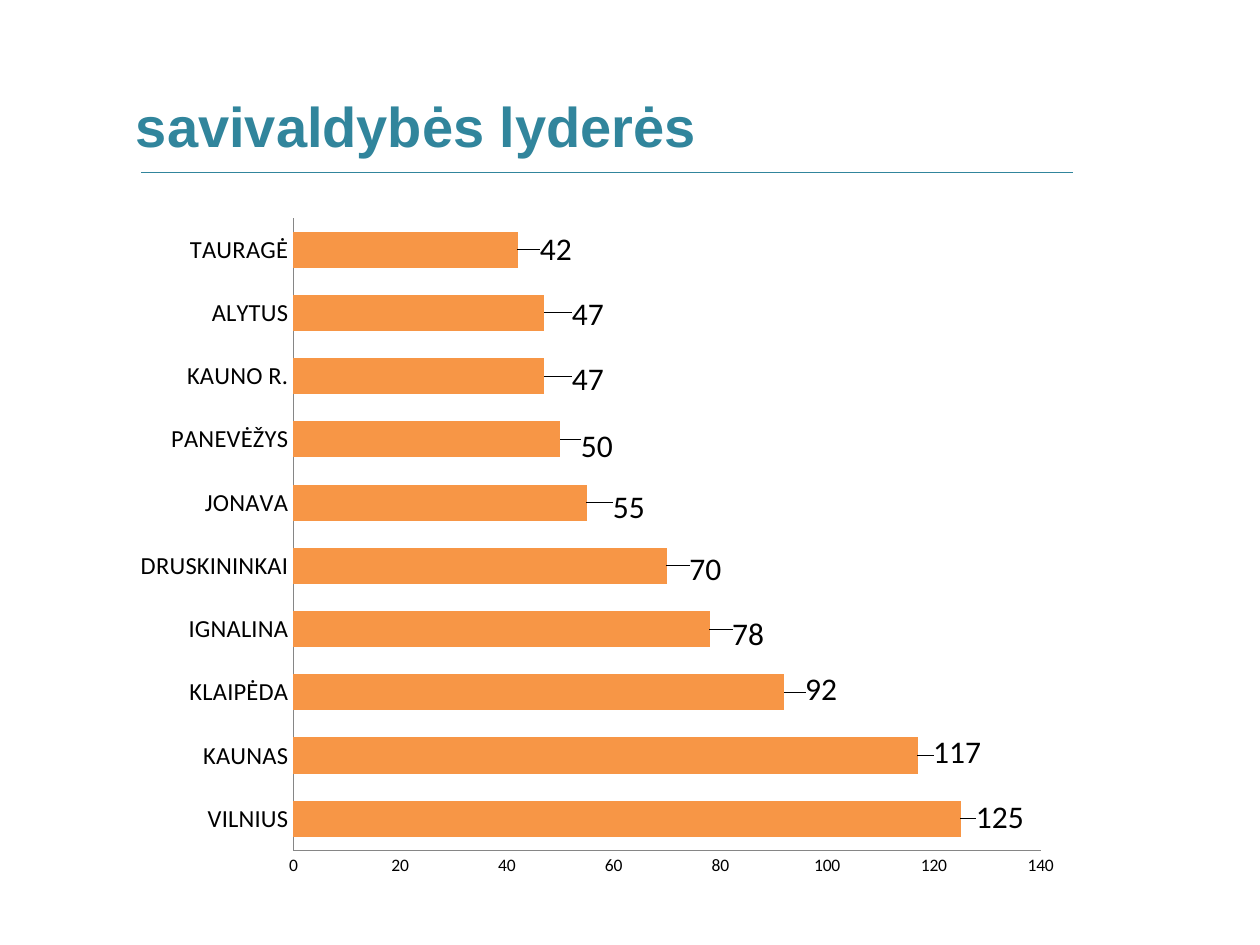
from dataclasses import dataclass

from lxml.etree import SubElement
from pptx import Presentation
from pptx.chart.data import CategoryChartData
from pptx.dml.color import RGBColor
from pptx.enum.chart import XL_CHART_TYPE, XL_LABEL_POSITION, XL_TICK_MARK
from pptx.enum.shapes import MSO_CONNECTOR
from pptx.oxml import parse_xml
from pptx.oxml.ns import nsdecls, qn
from pptx.util import Pt


@dataclass(frozen=True)
class Theme:
    """Colours, fonts and type sizes of the slide."""
    accent: RGBColor = RGBColor(0x31, 0x85, 0x9C)
    bar: RGBColor = RGBColor(0xF7, 0x96, 0x46)
    axis: RGBColor = RGBColor(0x86, 0x86, 0x86)
    text: RGBColor = RGBColor(0, 0, 0)
    title_font: str = "Arial"
    chart_font: str = "Calibri"
    title_size: int = 32
    label_size: int = 18
    category_size: int = 14
    scale_size: int = 10


THEME = Theme()
CHART_WIDTH, CHART_HEIGHT = 543, 391
PLOT_AREA = (97.7, 8, 427, 361.5)
MUNICIPALITIES = [
    ("VILNIUS", 125, (6, -1)),
    ("KAUNAS", 117, (6, -2)),
    ("KLAIPĖDA", 92, (9, -2)),
    ("IGNALINA", 78, (10, 3)),
    ("DRUSKININKAI", 70, (10, 2)),
    ("JONAVA", 55, (12, 3)),
    ("PANEVĖŽYS", 50, (9, 4)),
    ("KAUNO R.", 47, (13, 2)),
    ("ALYTUS", 47, (13, 1)),
    ("TAURAGĖ", 42, (10, 0)),
]


def style_font(font, name, size, color, bold=False):
    """Apply a typeface, size and colour to a font."""
    font.name, font.size, font.bold = name, Pt(size), bold
    font.color.rgb = color


def add_title(slide, text):
    """Add the slide heading."""
    box = slide.shapes.add_textbox(Pt(70.6), Pt(49), Pt(436), Pt(46))
    box.text_frame.word_wrap = True
    para = box.text_frame.paragraphs[0]
    para.text = text
    style_font(para.runs[0].font, THEME.title_font, THEME.title_size, THEME.accent, True)


def add_rule(slide):
    """Add the thin line below the heading."""
    rule = slide.shapes.add_connector(
        MSO_CONNECTOR.STRAIGHT, Pt(80.6), Pt(98.6), Pt(613.4), Pt(98.6))
    rule.line.color.rgb = THEME.accent
    rule.line.width = Pt(0.75)
    SubElement(rule._element.spPr, qn("a:effectLst"))


def manual_layout(**settings):
    """Build a chart layout element from named settings."""
    items = "".join(f'<c:{name} val="{value}"/>' for name, value in settings.items())
    return parse_xml(
        f'<c:layout {nsdecls("c")}><c:manualLayout>{items}</c:manualLayout></c:layout>')


def place_plot(chart):
    """Fix the inner plot area within the chart."""
    left, top, width, height = PLOT_AREA
    plot_area = chart._chartSpace.chart.plotArea
    for layout in plot_area.findall(qn("c:layout")):
        plot_area.remove(layout)
    plot_area.insert(0, manual_layout(
        layoutTarget="inner", xMode="edge", yMode="edge",
        x=left / CHART_WIDTH, y=top / CHART_HEIGHT,
        w=width / CHART_WIDTH, h=height / CHART_HEIGHT))


def style_axis(axis, size):
    """Give an axis its line and type, without ticks or gridlines."""
    axis.has_major_gridlines = False
    axis.major_tick_mark = axis.minor_tick_mark = XL_TICK_MARK.NONE
    axis.format.line.color.rgb = THEME.axis
    axis.format.line.width = Pt(0.75)
    style_font(axis.tick_labels.font, THEME.chart_font, size, THEME.text)


def add_value_label(series, index, offset):
    """Show one bar's value, shifted from the bar end."""
    label = series.points[index].data_label
    style_font(label.font, THEME.chart_font, THEME.label_size, THEME.text)
    label.position = XL_LABEL_POSITION.OUTSIDE_END
    element = series.data_labels._element.find(f'{qn("c:dLbl")}[{index + 1}]')
    across, down = offset
    element.insert(1, manual_layout(x=across / CHART_WIDTH, y=down / CHART_HEIGHT))


def add_leaders_chart(slide):
    """Add the bar chart of leading municipalities."""
    names, values, offsets = zip(*MUNICIPALITIES)
    data = CategoryChartData()
    data.categories = names
    data.add_series("Series 1", values)
    chart = slide.shapes.add_chart(
        XL_CHART_TYPE.BAR_CLUSTERED, Pt(70), Pt(116.6),
        Pt(CHART_WIDTH), Pt(CHART_HEIGHT), data).chart
    chart.has_legend = chart.has_title = False
    style_font(chart.font, THEME.chart_font, THEME.scale_size, THEME.text)
    place_plot(chart)
    style_axis(chart.category_axis, THEME.category_size)
    style_axis(chart.value_axis, THEME.scale_size)
    chart.value_axis.minimum_scale = 0
    chart.value_axis.maximum_scale = 140
    chart.value_axis.major_unit = 20
    plot = chart.plots[0]
    plot.gap_width = 75
    plot.vary_by_categories = False
    series = plot.series[0]
    series.format.fill.solid()
    series.format.fill.fore_color.rgb = THEME.bar
    series.data_labels.show_value = True
    style_font(series.data_labels.font, THEME.chart_font, THEME.label_size, THEME.text)
    for index, offset in enumerate(offsets):
        add_value_label(series, index, offset)


def main():
    """Build and save the deck."""
    deck = Presentation()
    deck.slide_width, deck.slide_height = Pt(720), Pt(540)
    page = deck.slides.add_slide(deck.slide_layouts[6])
    add_title(page, "savivaldybės lyderės")
    add_rule(page)
    add_leaders_chart(page)
    deck.save("out.pptx")


if __name__ == "__main__":
    main()
